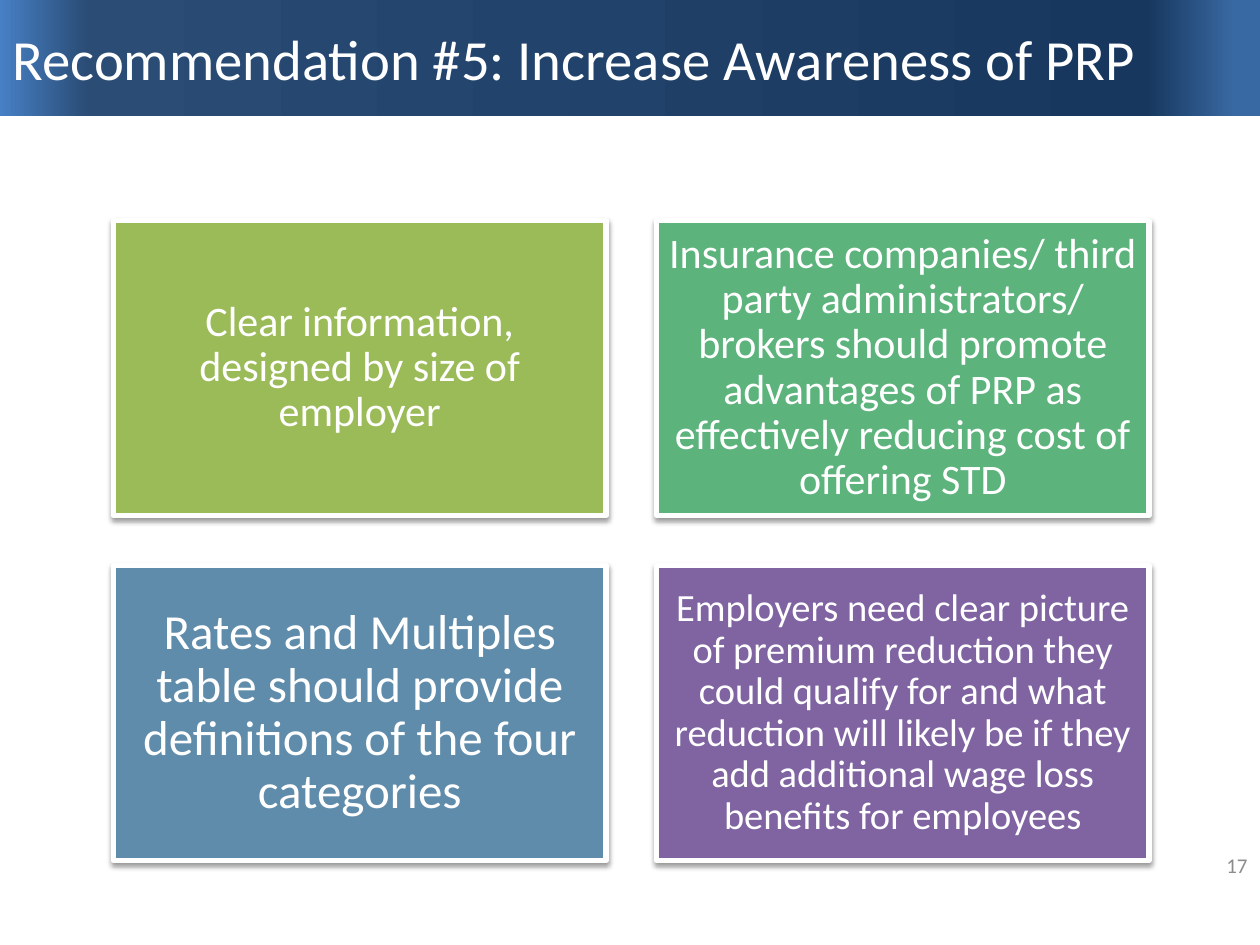
from dataclasses import dataclass
from typing import Any

from lxml.etree import SubElement
from pptx import Presentation
from pptx.dml.color import RGBColor as RGB
from pptx.enum.shapes import MSO_SHAPE as Shape
from pptx.enum.text import MSO_ANCHOR as Anchor, MSO_AUTO_SIZE as Fit, PP_ALIGN as Align
from pptx.oxml import parse_xml
from pptx.oxml.ns import nsdecls, qn
from pptx.util import Inches, Pt

COLORS = {
    "white": "FFFFFF", "gray": "8C8C8C", "lime": "9BBB59",
    "green": "5CB37C", "blue": "608CAB", "plum": "8064A2",
}
STOPS = ((2, "3969A2"), (9, "17375E"), (93, "2A4C75"), (100, "4780C5"))
BAND = (0, 0, 10, 0.92)
LEFT, TOP, WIDE, HIGH, GAP = 0.9, 1.75, 3.91, 2.34, 0.4


@dataclass
class Card:
    text: str
    fill: str
    size: int
    inset: float


CARDS = (
    Card("Clear information, designed by size of employer", "lime", 24, 0.1),
    Card("Insurance companies/ third party administrators/ brokers should promote "
         "advantages of PRP as effectively reducing cost of offering STD", "green", 24, 0.1),
    Card("Rates and Multiples table should provide definitions of the four categories",
         "blue", 28, 0.12),
    Card("Employers need clear picture of premium reduction they could qualify for and "
         "what reduction will likely be if they add additional wage loss benefits for "
         "employees", "plum", 22, 0.09),
)


def color(name: str) -> RGB:
    return RGB.from_string(COLORS[name])


def apply(item: Any, values: dict[str, Any]) -> None:
    for name, value in values.items():
        setattr(item, name, value)


def write(shape: Any, text: str, size: float, align: Any, hue: str = "white",
          inset: tuple[float, float] = (0.1, 0.05), lead: float = 1.0) -> None:
    frame = shape.text_frame
    side, edge = map(Inches, inset)
    apply(frame, {"word_wrap": True, "auto_size": Fit.NONE, "vertical_anchor": Anchor.MIDDLE,
                  "margin_left": side, "margin_right": side,
                  "margin_top": edge, "margin_bottom": edge})
    para = frame.paragraphs[0]
    apply(para, {"text": text, "alignment": align, "line_spacing": lead})
    font = para.runs[0].font
    apply(font, {"name": "Calibri", "size": Pt(size)})
    font.color.rgb = color(hue)


def shade(shape: Any) -> None:
    """Add a soft shadow that falls straight down."""
    shape.shadow.inherit = False
    effects = shape._element.spPr.find(qn("a:effectLst"))
    drop = SubElement(effects, qn("a:outerShdw"), blurRad=str(Pt(3.1)), dist=str(Pt(1.6)),
                      dir="5400000", rotWithShape="0")
    black = SubElement(drop, qn("a:srgbClr"), val="000000")
    SubElement(black, qn("a:alpha"), val="38000")


def add_band(slide: Any) -> None:
    """Put the gradient band behind the title."""
    band = slide.shapes.add_shape(Shape.RECTANGLE, *map(Inches, BAND))
    band.shadow.inherit = False
    band.line.fill.background()
    stops = "".join(f'<a:gs pos="{pos * 1000}"><a:srgbClr val="{hue}"/></a:gs>'
                    for pos, hue in STOPS)
    grad = parse_xml(f'<a:gradFill {nsdecls("a")} rotWithShape="1"><a:gsLst>{stops}</a:gsLst>'
                     '<a:lin ang="10800000" scaled="0"/></a:gradFill>')
    band._element.spPr.find(qn("a:prstGeom")).addnext(grad)
    slide.shapes._spTree.insert(2, band._element)


def add_title(slide: Any) -> None:
    title = slide.shapes.title
    apply(title, dict(zip(("left", "top", "width", "height"), map(Inches, BAND))))
    write(title, "Recommendation #5: Increase Awareness of PRP", 32.4, Align.LEFT)


def add_card(slide: Any, card: Card, row: int, col: int) -> None:
    place = (LEFT + col * (WIDE + GAP), TOP + row * (HIGH + GAP), WIDE, HIGH)
    box = slide.shapes.add_shape(Shape.RECTANGLE, *map(Inches, place))
    box.fill.solid()
    box.fill.fore_color.rgb = color(card.fill)
    box.line.color.rgb = color("white")
    box.line.width = Pt(3)
    shade(box)
    write(box, card.text, card.size, Align.CENTER, inset=(card.inset, card.inset), lead=0.9)


def main() -> None:
    deck = Presentation()
    apply(deck, {"slide_width": Inches(10), "slide_height": Inches(7.5)})
    slide = deck.slides.add_slide(deck.slide_layouts[5])
    add_band(slide)
    add_title(slide)
    for index, card in enumerate(CARDS):
        add_card(slide, card, *divmod(index, 2))
    number = slide.shapes.add_textbox(*map(Inches, (7.67, 6.67, 2.33, 0.4)))
    write(number, "17", 12, Align.RIGHT, "gray")
    deck.save("out.pptx")


if __name__ == "__main__":
    main()
